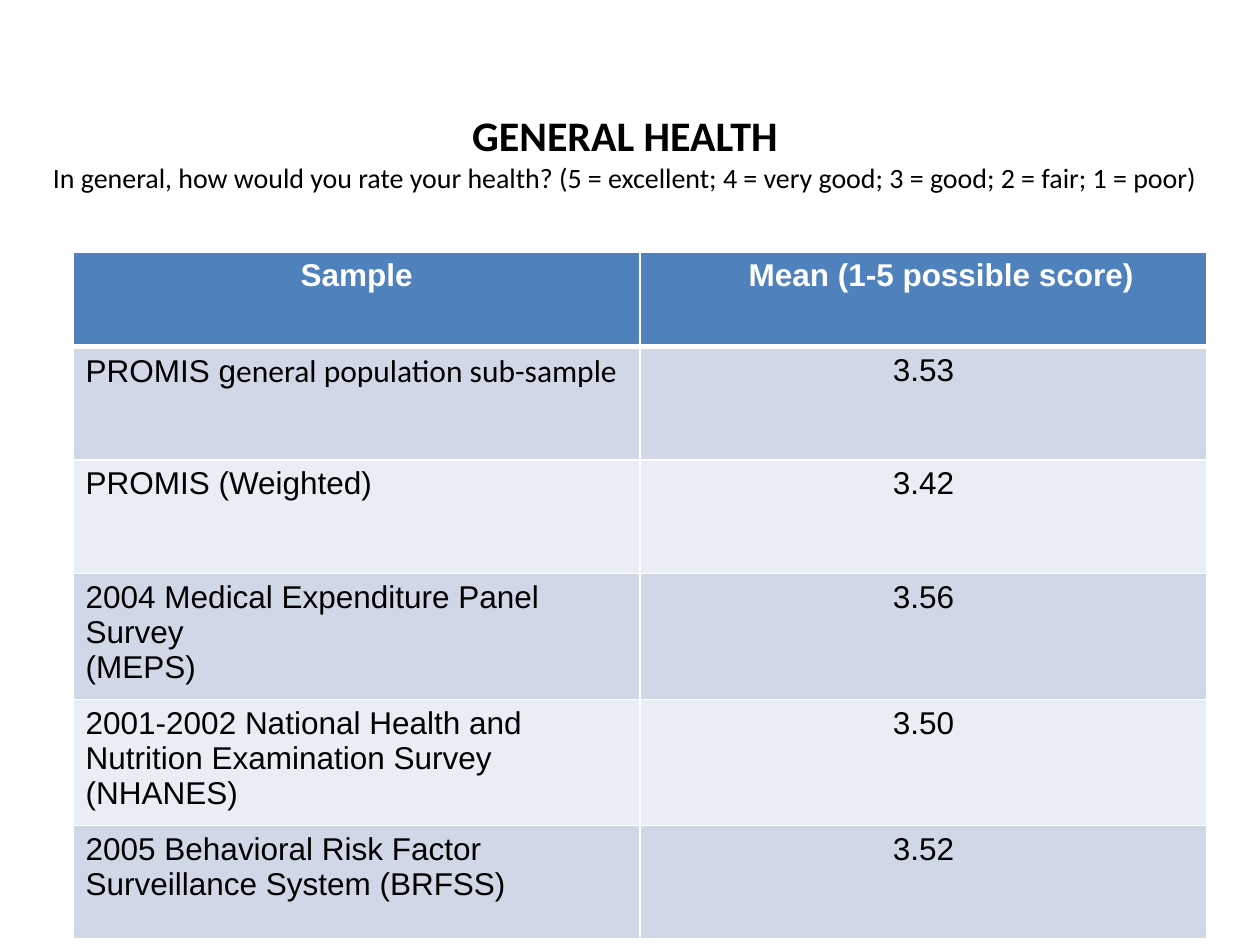
from dataclasses import dataclass

from lxml.etree import SubElement
from pptx import Presentation
from pptx.dml.color import RGBColor
from pptx.enum.text import MSO_ANCHOR as Anchor, PP_ALIGN as Align
from pptx.oxml.ns import qn
from pptx.util import Inches, Pt


@dataclass(frozen=True)
class Theme:
    title_font: str = "Calibri"
    table_font: str = "Arial"
    title_size: int = 24
    question_size: int = 16
    table_size: int = 18
    ink: str = "000000"
    white: str = "FFFFFF"
    header: str = "4F81BD"
    bands: tuple = ("D0D8E8", "E9EDF4")
    rule: int = 1
    header_rule: int = 3


THEME = Theme()
HEADINGS = ("Sample", "Mean (1-5 possible score)")
SAMPLES = (
    ("PROMIS general population sub-sample", "3.53"),
    ("PROMIS (Weighted)", "3.42"),
    ("2004 Medical Expenditure Panel Survey\n(MEPS)", "3.56"),
    ("2001-2002 National Health and Nutrition Examination Survey (NHANES)", "3.50"),
    ("2005 Behavioral Risk Factor Surveillance System (BRFSS)", "3.52"),
)
CALIBRI_TAIL = "eneral population sub-sample"


def add_span(para, text, font=THEME.table_font, size=THEME.table_size,
             color=THEME.ink, bold=False):
    span = para.add_run()
    span.text = text
    span.font.name = font
    span.font.size = Pt(size)
    span.font.bold = bold
    span.font.color.rgb = RGBColor.from_string(color)


def add_title(page):
    box = page.shapes.add_textbox(Inches(0), Inches(0.58), Inches(9.92), Inches(1.25))
    frame = box.text_frame
    frame.word_wrap = True
    frame.vertical_anchor = Anchor.MIDDLE
    para = frame.paragraphs[0]
    para.alignment = Align.CENTER
    add_span(para, "GENERAL HEALTH", font=THEME.title_font,
             size=THEME.title_size, bold=True)
    para.add_line_break()
    add_span(para, "In general, how would you rate your health? "
             "(5 = excellent; 4 = very good; 3 = good; 2 = fair; 1 = poor)",
             font=THEME.title_font, size=THEME.question_size)


def set_borders(cell, top, bottom):
    """Draw white rules round a cell; call before the cell is filled."""
    properties = cell._tc.get_or_add_tcPr()
    widths = {"lnL": THEME.rule, "lnR": THEME.rule, "lnT": top, "lnB": bottom}
    for side, width in widths.items():
        line = SubElement(properties, qn(f"a:{side}"), w=str(Pt(width)))
        fill = SubElement(line, qn("a:solidFill"))
        SubElement(fill, qn("a:srgbClr"), val=THEME.white)


def fill_cell(cell, text, fill, align, top=THEME.rule, bottom=THEME.rule, **style):
    set_borders(cell, top, bottom)
    cell.fill.solid()
    cell.fill.fore_color.rgb = RGBColor.from_string(fill)
    frame = cell.text_frame
    for index, line in enumerate(text.split("\n")):
        para = frame.add_paragraph() if index else frame.paragraphs[0]
        para.alignment = align
        head = line.removesuffix(CALIBRI_TAIL)
        add_span(para, head, **style)
        if head != line:
            add_span(para, CALIBRI_TAIL, font=THEME.title_font)


def add_score_table(page):
    table = page.shapes.add_table(len(SAMPLES) + 1, len(HEADINGS), Inches(0.58),
                                  Inches(2), Inches(9), Inches(5.25)).table
    table.horz_banding = False
    for index, row in enumerate(table.rows):
        row.height = Inches(0.9 if index else 0.75)

    for column, heading in enumerate(HEADINGS):
        fill_cell(table.cell(0, column), heading, THEME.header, Align.CENTER,
                  bottom=THEME.header_rule, color=THEME.white, bold=True)
    table.cell(0, 1).margin_left = Inches(0.38)

    for index, (sample, mean) in enumerate(SAMPLES):
        fill = THEME.bands[index % 2]
        top = THEME.rule if index else THEME.header_rule
        fill_cell(table.cell(index + 1, 0), sample, fill, Align.LEFT, top=top)
        fill_cell(table.cell(index + 1, 1), mean, fill, Align.CENTER, top=top)


def main():
    deck = Presentation()
    deck.slide_width, deck.slide_height = Inches(10), Inches(7.5)
    page = deck.slides.add_slide(deck.slide_layouts[6])
    add_title(page)
    add_score_table(page)
    deck.save("out.pptx")


if __name__ == "__main__":
    main()
